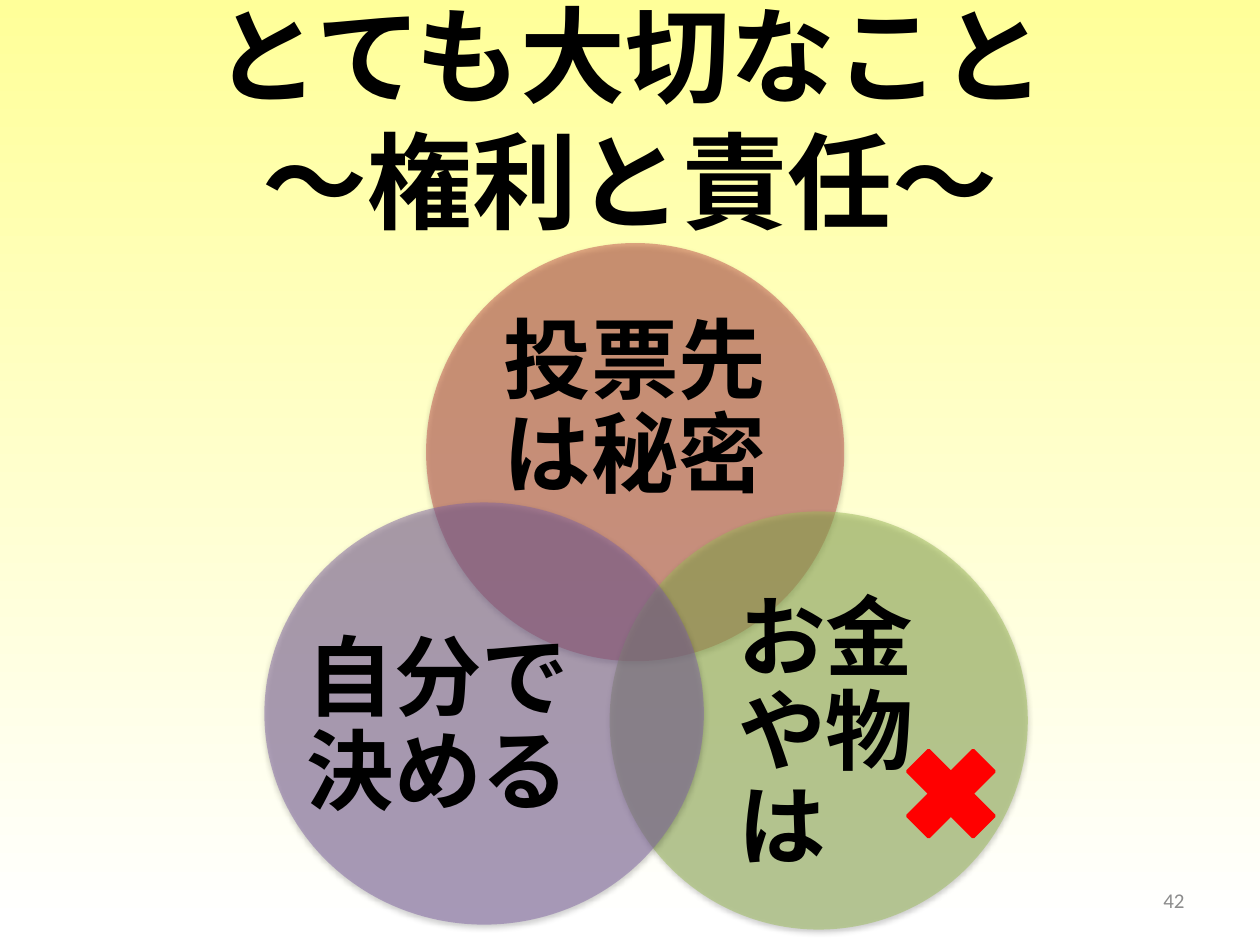
"""Build a slide on voting rights and duties with three overlapping circles."""
from dataclasses import dataclass

from lxml import etree
from pptx import Presentation
from pptx.dml.color import RGBColor
from pptx.enum import shapes, text
from pptx.oxml import ns
from pptx.util import Cm, Pt


@dataclass(frozen=True)
class Theme:
    top: str = "FFFF99"
    base: str = "FFFFFF"
    ink: str = "000000"
    gray: str = "8C8C8C"
    red: str = "FF0000"
    font: str = "Noto Sans CJK JP"
    small: str = "Calibri"
    head: int = 60
    body: int = 50
    foot: int = 12


@dataclass(frozen=True)
class Box:
    left: float
    top: float
    width: float
    height: float

    def size(self) -> list:
        return [Cm(v) for v in (self.left, self.top, self.width, self.height)]


@dataclass(frozen=True)
class Ring:
    box: Box
    color: str
    label: Box
    words: str
    align: text.PP_ALIGN = text.PP_ALIGN.CENTER


THEME = Theme()
RINGS = [
    Ring(Box(8.59, 4.9, 8.43, 8.43), "C0504D", Box(9.7, 6.4, 6.2, 3.78), "投票先は秘密"),
    Ring(Box(12.29, 10.31, 8.43, 8.43), "9BBB59", Box(14.88, 12.5, 5.05, 4.65),
         "お金や物は", text.PP_ALIGN.LEFT),
    Ring(Box(5.33, 10.13, 8.86, 8.51), "8064A2", Box(6.17, 12.34, 5.33, 4.67), "自分で決める"),
]


def rgb(code: str) -> RGBColor:
    return RGBColor.from_string(code)


def add(parent, tag: str, **attrs: str):
    return etree.SubElement(parent, ns.qn(tag), attrs)


def write(para, words: str, size: int, color: str, face: str, bold: bool = True) -> None:
    run = para.add_run()
    run.text = words
    font = run.font
    font.size, font.bold, font.name = Pt(size), bold, face
    font.color.rgb = rgb(color)
    add(font._element, "a:ea", typeface=face)


def frame(shape, align: text.PP_ALIGN):
    area = shape.text_frame
    area.word_wrap = True
    area.auto_size = text.MSO_AUTO_SIZE.NONE
    area.vertical_anchor = text.MSO_ANCHOR.MIDDLE
    para = area.paragraphs[0]
    para.alignment = align
    return para


def paint(slide) -> None:
    fill = slide.background.fill
    fill.gradient()
    fill.gradient_angle = 270
    for stop, color, place in zip(fill.gradient_stops, (THEME.top, THEME.base), (0, 0.98)):
        stop.color.rgb = rgb(color)
        stop.position = place


def title(slide) -> None:
    shape = slide.shapes.title
    shape.left, shape.top, shape.width, shape.height = Box(1.27, 0.76, 22.86, 3.18).size()
    para = frame(shape, text.PP_ALIGN.CENTER)
    write(para, "とても大切なこと", THEME.head, THEME.ink, THEME.font)
    para.add_line_break()
    write(para, "～権利と責任～", THEME.head, THEME.ink, THEME.font)


def solid(slide, kind: shapes.MSO_SHAPE, box: Box, color: str):
    shape = slide.shapes.add_shape(kind, *box.size())
    shape.shadow.inherit = False
    shape.fill.solid()
    shape.fill.fore_color.rgb = rgb(color)
    return shape


def circle(slide, ring: Ring) -> None:
    shape = solid(slide, shapes.MSO_SHAPE.OVAL, ring.box, ring.color)
    shape.line.fill.background()
    props = shape._element.spPr
    add(props.find(ns.qn("a:solidFill"))[0], "a:alpha", val="50000")
    shade = add(props.find(ns.qn("a:effectLst")), "a:outerShdw", blurRad="40000",
                dist="20000", dir="5400000", rotWithShape="0")
    add(add(shade, "a:srgbClr", val=THEME.ink), "a:alpha", val="38000")
    label = slide.shapes.add_textbox(*ring.label.size())
    para = frame(label, ring.align)
    area = label.text_frame
    area.margin_left = area.margin_right = area.margin_top = area.margin_bottom = 0
    para.line_spacing = 0.9
    write(para, ring.words, THEME.body, THEME.ink, THEME.font)


def cross(slide) -> None:
    shape = solid(slide, shapes.MSO_SHAPE.MATH_MULTIPLY, Box(17.9, 14.73, 2.54, 2.54), THEME.red)
    shape.line.color.rgb = rgb(THEME.red)
    shape.line.width = Pt(2)


def number(slide) -> None:
    shape = slide.shapes.add_textbox(*Box(18.2, 17.65, 5.93, 1.01).size())
    para = frame(shape, text.PP_ALIGN.RIGHT)
    write(para, "42", THEME.foot, THEME.gray, THEME.small, False)


def main() -> None:
    deck = Presentation()
    deck.slide_width, deck.slide_height = Cm(25.4), Cm(19.05)
    slide = deck.slides.add_slide(deck.slide_layouts[5])
    paint(slide)
    number(slide)
    title(slide)
    for ring in RINGS:
        circle(slide, ring)
    cross(slide)
    deck.save("out.pptx")


if __name__ == "__main__":
    main()
